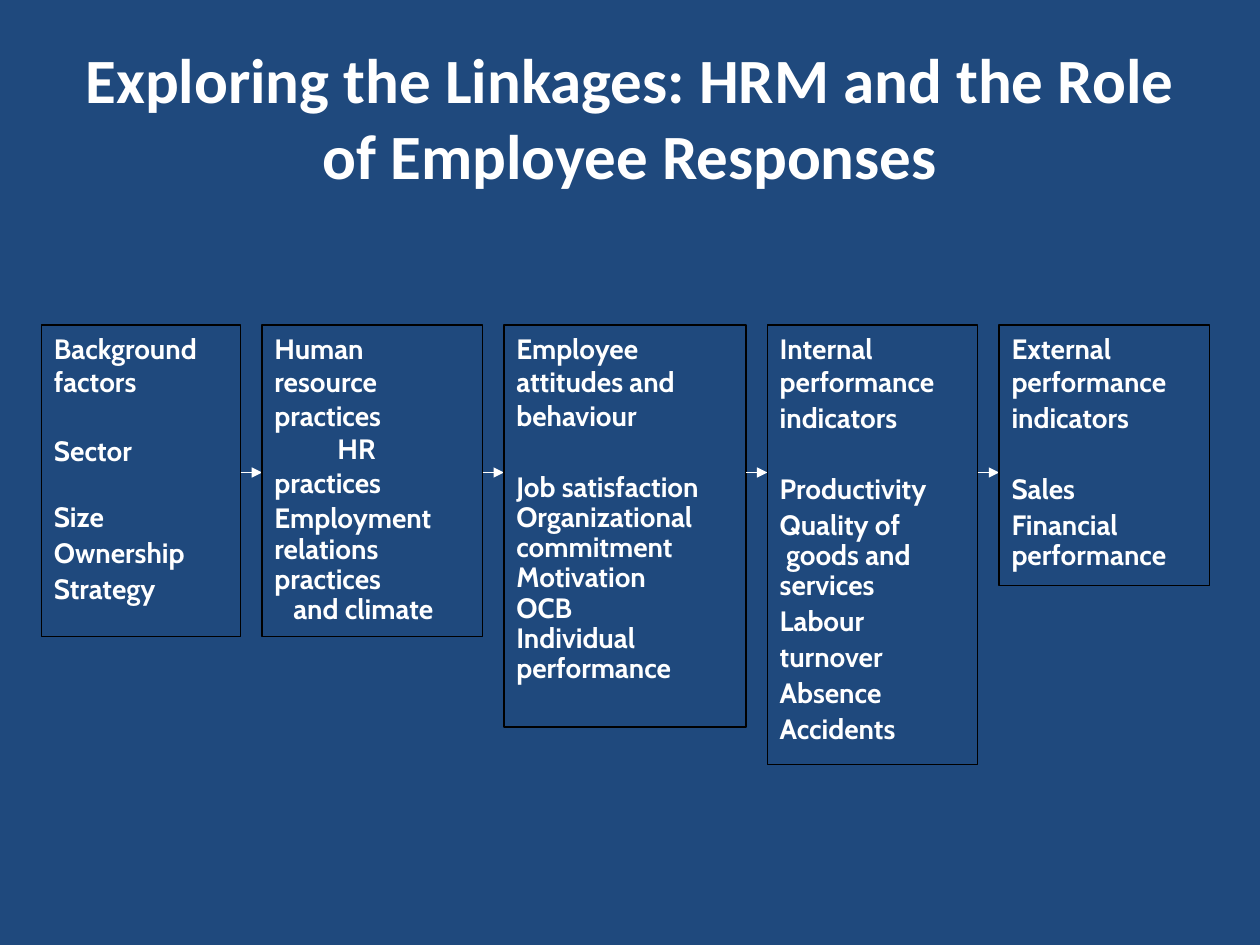
from dataclasses import dataclass
from typing import Any

from lxml.etree import SubElement
from pptx import Presentation
from pptx.dml.color import RGBColor
from pptx.enum.shapes import MSO_CONNECTOR, MSO_SHAPE
from pptx.enum.text import MSO_ANCHOR, PP_ALIGN
from pptx.oxml.ns import qn
from pptx.util import Inches, Pt

TITLE = "Exploring the Linkages: HRM and the Role of Employee Responses"
BOX_TOP = 2.58
ARROW_Y = 3.75
FIRST_LEFT = 0.33
GAP = 0.17


def color(value):
    return RGBColor.from_string(value)


@dataclass
class Line:
    text: str
    before: float = 3.2
    spacing: float = 0.9
    indent: float = 0


def heading(text, indent=0):
    return Line(text, 0, 1, indent)


def tight(text, indent=0):
    return Line(text, 0, 0.9, indent)


STAGES = [
    (1.58, 2.47, [
        heading("Background factors"),
        Line("Sector", 22.3),
        Line("Size", 20.6),
        Line("Ownership"),
        Line("Strategy"),
    ]),
    (1.75, 2.47, [
        heading("Human\nresource\npractices"),
        heading("HR", 0.5),
        heading("practices"),
        Line("Employment\nrelations\npractices"),
        tight("and climate", 0.15),
    ]),
    (1.92, 3.19, [
        heading("Employee\nattitudes and behaviour"),
        Line("Job satisfaction", 23.5),
        tight("Organizational commitment"),
        tight("Motivation"),
        tight("OCB"),
        tight("Individual\nperformance"),
    ]),
    (1.67, 3.49, [
        heading("Internal performance"),
        Line("indicators"),
        Line("Productivity", 23.5),
        Line("Quality of"),
        tight("goods and", 0.05),
        tight("services"),
        Line("Labour"),
        Line("turnover"),
        Line("Absence"),
        Line("Accidents"),
    ]),
    (1.67, 2.07, [
        heading("External performance"),
        Line("indicators"),
        Line("Sales", 23.5),
        Line("Financial performance"),
    ]),
]


@dataclass
class Painter:
    page: Any
    text_color: str = "FFFFFF"
    border_color: str = "000000"
    title_font: str = "Calibri"
    body_font: str = "Cabin"
    line_width: float = 0.75

    def background(self, value):
        fill = self.page.background.fill
        fill.solid()
        fill.fore_color.rgb = color(value)

    def style(self, para, name, size):
        para.font.name = name
        para.font.size = Pt(size)
        para.font.bold = True
        para.font.color.rgb = color(self.text_color)

    def title(self, text, left, top, width, height):
        box = self.page.shapes.add_textbox(
            Inches(left), Inches(top), Inches(width), Inches(height))
        frame = box.text_frame
        frame.word_wrap = True
        frame.vertical_anchor = MSO_ANCHOR.MIDDLE
        para = frame.paragraphs[0]
        para.text = text
        para.alignment = PP_ALIGN.CENTER
        self.style(para, self.title_font, 36)

    def stage(self, left, top, width, height, lines):
        box = self.page.shapes.add_shape(
            MSO_SHAPE.RECTANGLE,
            Inches(left), Inches(top), Inches(width), Inches(height))
        box.shadow.inherit = False
        box.fill.background()
        box.line.color.rgb = color(self.border_color)
        box.line.width = Pt(self.line_width)
        frame = box.text_frame
        frame.word_wrap = True
        frame.vertical_anchor = MSO_ANCHOR.TOP
        for index, line in enumerate(lines):
            para = frame.add_paragraph() if index else frame.paragraphs[0]
            para.text = line.text
            para.alignment = PP_ALIGN.LEFT
            para.line_spacing = line.spacing
            para.space_before = Pt(line.before)
            if line.indent:
                properties = para._p.get_or_add_pPr()
                properties.set("marL", "0")
                properties.set("indent", str(Inches(line.indent)))
            self.style(para, self.body_font, 16)

    def arrow(self, start, end, y):
        arrow = self.page.shapes.add_connector(
            MSO_CONNECTOR.STRAIGHT,
            Inches(start), Inches(y), Inches(end), Inches(y))
        arrow.line.color.rgb = color(self.text_color)
        arrow.line.width = Pt(self.line_width)
        SubElement(arrow.line._get_or_add_ln(), qn("a:tailEnd"), type="triangle")
        SubElement(arrow._element.spPr, qn("a:effectLst"))


def main():
    deck = Presentation()
    deck.slide_width = Inches(10)
    deck.slide_height = Inches(7.5)
    painter = Painter(deck.slides.add_slide(deck.slide_layouts[6]))
    painter.background("1F497D")
    painter.title(TITLE, 0.5, 0.3, 9, 1.25)
    left = FIRST_LEFT
    for index, (width, height, lines) in enumerate(STAGES):
        if index:
            painter.arrow(left - GAP, left, ARROW_Y)
        painter.stage(left, BOX_TOP, width, height, lines)
        left += width + GAP
    deck.save("out.pptx")


if __name__ == "__main__":
    main()
